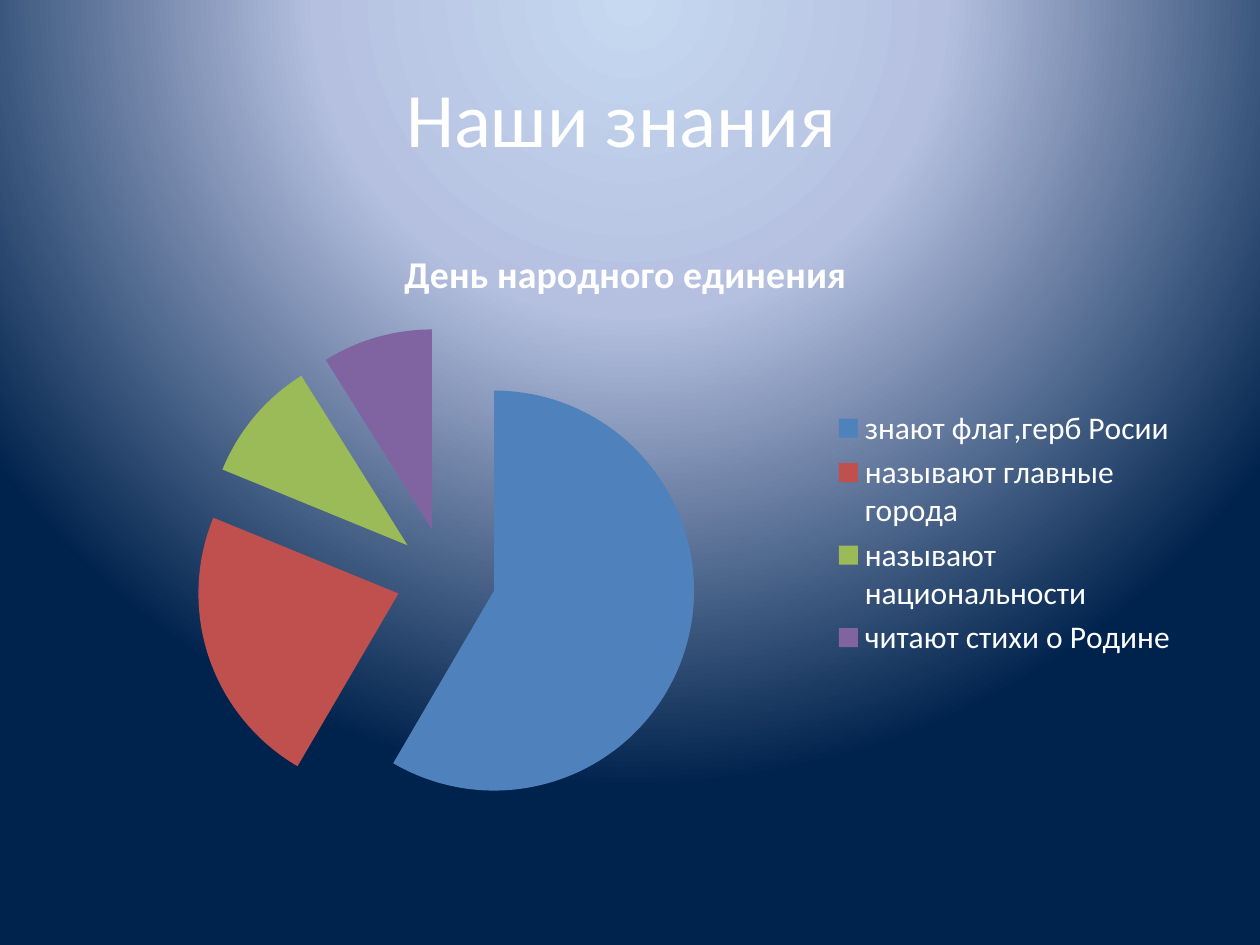
from pptx import Presentation
from pptx.chart.data import CategoryChartData
from pptx.dml.color import RGBColor
from pptx.enum.chart import XL_CHART_TYPE, XL_LEGEND_POSITION
from pptx.enum.text import MSO_ANCHOR, PP_ALIGN
from pptx.oxml import parse_xml
from pptx.oxml.ns import nsdecls
from pptx.util import Pt

PIE = XL_CHART_TYPE.PIE
RIGHT = XL_LEGEND_POSITION.RIGHT
MIDDLE = MSO_ANCHOR.MIDDLE
CENTER = PP_ALIGN.CENTER

EMU_PER_PX = 914400 // 126
WHITE = RGBColor(0xFF, 0xFF, 0xFF)
SKY = RGBColor(0xC6, 0xD9, 0xF1)
LAVENDER = RGBColor(0xB5, 0xC0, 0xE0)
NAVY = RGBColor(0x00, 0x23, 0x4D)
BLUE = RGBColor(0x4F, 0x81, 0xBD)
RED = RGBColor(0xC0, 0x50, 0x4D)
GREEN = RGBColor(0x9B, 0xBB, 0x59)
PURPLE = RGBColor(0x80, 0x64, 0xA2)

BACKDROP = [(0, SKY, 71), (40, LAVENDER, 100), (100, NAVY, 100)]
KNOWLEDGE = [
    ("знают флаг,герб Росии ", 59, BLUE),
    ("называют главные города", 23, RED),
    ("называют национальности", 10, GREEN),
    ("читают стихи о Родине", 9, PURPLE),
]


class SlideBuilder:
    """Hold the text style and the current slide, and add elements to it."""

    def __init__(self, page, font="Calibri", color=WHITE):
        self.page = page
        self.font = font
        self.color = color

    def px(self, *lengths):
        return [length * EMU_PER_PX for length in lengths]

    def style(self, font, size, bold=False):
        font.name = self.font
        font.size = Pt(size)
        font.bold = bold
        font.color.rgb = self.color

    def background(self, stops):
        stop_xml = "".join(
            f'<a:gs pos="{place * 1000}"><a:srgbClr val="{color}">'
            f'<a:alpha val="{opacity * 1000}"/></a:srgbClr></a:gs>'
            for place, color, opacity in stops
        )
        backdrop = parse_xml(
            f'<p:bg {nsdecls("p", "a")}><p:bgPr><a:gradFill rotWithShape="1">'
            f'<a:gsLst>{stop_xml}</a:gsLst><a:path path="circle">'
            '<a:fillToRect l="50000" t="-80000" r="50000" b="180000"/>'
            '</a:path></a:gradFill><a:effectLst/></p:bgPr></p:bg>'
        )
        self.page.element.cSld.insert(0, backdrop)

    def text(self, words, bounds, size):
        box = self.page.shapes.add_textbox(*self.px(*bounds))
        frame = box.text_frame
        frame.word_wrap = True
        frame.vertical_anchor = MIDDLE
        frame.text = words
        para = frame.paragraphs[0]
        para.alignment = CENTER
        self.style(para.runs[0].font, size)

    def pie(self, title, slices, bounds, size, title_size, explosion):
        data = CategoryChartData()
        data.categories = [label for label, _, _ in slices]
        data.add_series("Series 1", [value for _, value, _ in slices])
        chart = self.page.shapes.add_chart(PIE, *self.px(*bounds), data).chart
        self.style(chart.font, size)
        chart.has_title = True
        heading = chart.chart_title.text_frame
        heading.text = title
        self.style(heading.paragraphs[0].runs[0].font, title_size, bold=True)
        chart.has_legend = True
        chart.legend.position = RIGHT
        chart.legend.include_in_layout = False
        self.style(chart.legend.font, size)
        plot = chart.plots[0]
        plot.vary_by_categories = True
        series = plot.series[0]
        for index, (_, _, color) in enumerate(slices):
            fill = series.points[index].format.fill
            fill.solid()
            fill.fore_color.rgb = color
        first_point = series.points[0].format and series._element.find(
            "{*}dPt"
        )
        first_point.addprevious(
            parse_xml(f'<c:explosion {nsdecls("c")} val="{explosion}"/>')
        )


def main():
    deck = Presentation()
    deck.slide_width, deck.slide_height = 1260 * EMU_PER_PX, 945 * EMU_PER_PX
    page = deck.slides.add_slide(deck.slide_layouts[6])
    builder = SlideBuilder(page)
    builder.background(BACKDROP)
    builder.text("Наши знания ", (63, 38, 1134, 158), 44)
    builder.pie("День народного единения ", KNOWLEDGE,
                (63, 221, 1134, 624), 18, 21.6, 25)
    deck.save("out.pptx")


if __name__ == "__main__":
    main()
